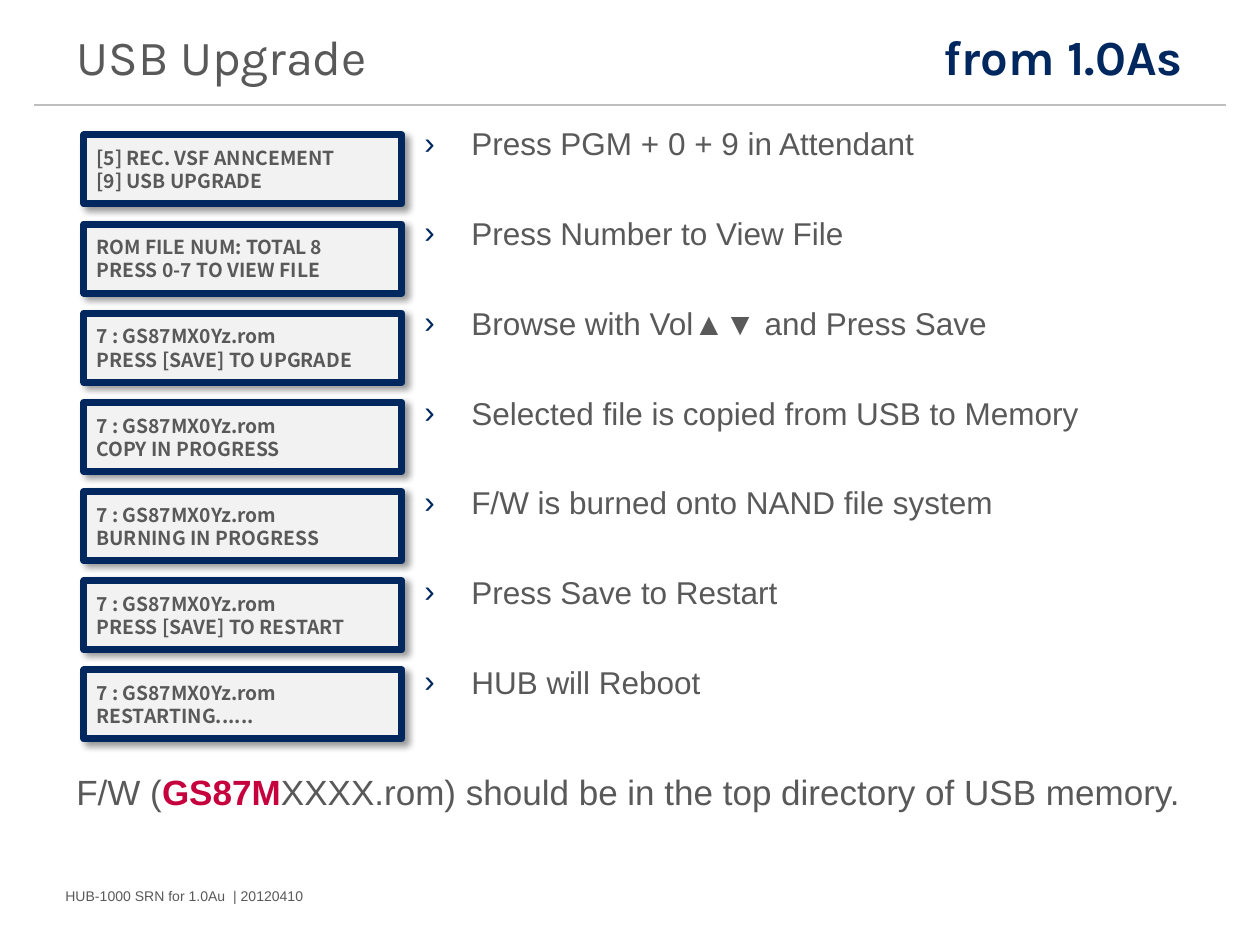
from lxml.etree import SubElement
from pptx import Presentation
from pptx.dml.color import RGBColor
from pptx.enum.shapes import MSO_CONNECTOR, MSO_SHAPE
from pptx.enum.text import MSO_ANCHOR, MSO_AUTO_SIZE, PP_ALIGN
from pptx.oxml.ns import qn
from pptx.util import Pt

TITLE = "USB Upgrade"
SINCE = "from 1.0As"
FOOT = "HUB-1000 SRN for 1.0Au  | 20120410"
NOTE = [("F/W (", "gray", False), ("GS87M", "red", True),
        ("XXXX.rom) should be in the top directory of USB memory.", "gray", False)]
ROM = "7 : GS87MX0Yz.rom"
CARDS = [
    ("[5] REC. VSF ANNCEMENT", "[9] USB UPGRADE"),
    ("ROM FILE NUM: TOTAL 8", "PRESS 0-7 TO VIEW FILE"),
    (ROM, "PRESS [SAVE] TO UPGRADE"),
    (ROM, "COPY IN PROGRESS"),
    (ROM, "BURNING IN PROGRESS"),
    (ROM, "PRESS [SAVE] TO RESTART"),
    (ROM, "RESTARTING......"),
]
STEPS = [
    "Press PGM + 0 + 9 in Attendant",
    "Press Number to View File",
    "Browse with Vol▲▼ and Press Save",
    "Selected file is copied from USB to Memory",
    "F/W is burned onto NAND file system",
    "Press Save to Restart",
    "HUB will Reboot",
]
HEX = {"gray": "595959", "navy": "00285E", "red": "C5003D",
       "pale": "F2F2F2", "rule": "BFBFBF", "black": "000000"}
PX = 914400 / 126
HEAD = (64, 20, 1131, 69)
FIRST, LAST = 135, 670


def emu(*vals):
    return [round(v * PX) for v in vals]


def rgb(name):
    return RGBColor.from_string(HEX[name])


def style(font, size, name="Arial", color="gray", bold=False):
    font.size = Pt(size)
    font.name = name
    font.bold = bold
    font.color.rgb = rgb(color)


def box(slide, area):
    frame = slide.shapes.add_textbox(*emu(*area)).text_frame
    frame.word_wrap = True
    return frame


def bullet(para):
    props = para._p.get_or_add_pPr()
    indent = emu(47)[0]
    props.set("marL", str(indent))
    props.set("indent", str(-indent))
    color = SubElement(props, qn("a:buClr"))
    SubElement(color, qn("a:srgbClr"), val=HEX["navy"])
    SubElement(props, qn("a:buFont"), typeface="Arial")
    SubElement(props, qn("a:buChar"), char="›")


def shade(shape):
    shape.shadow.inherit = False
    effects = shape._element.spPr.find(qn("a:effectLst"))
    drop = SubElement(effects, qn("a:outerShdw"), blurRad=str(Pt(4)), dist=str(Pt(3)),
                      dir="2700000", algn="tl", rotWithShape="0")
    color = SubElement(drop, qn("a:srgbClr"), val=HEX["black"])
    SubElement(color, qn("a:alpha"), val="40000")


def add_head(slide):
    title = slide.shapes.title
    title.left, title.top, title.width, title.height = emu(*HEAD)
    frame = title.text_frame
    frame.text = TITLE
    frame.auto_size = MSO_AUTO_SIZE.NONE
    frame.vertical_anchor = MSO_ANCHOR.TOP
    para = frame.paragraphs[0]
    para.alignment = PP_ALIGN.LEFT
    style(para.font, 28, "Karla")

    para = box(slide, HEAD).paragraphs[0]
    para.text = SINCE
    para.alignment = PP_ALIGN.RIGHT
    style(para.font, 28, "Karla", "navy", True)

    rule = slide.shapes.add_connector(MSO_CONNECTOR.STRAIGHT, *emu(34, 105, 1226, 105))
    rule.line.color.rgb = rgb("rule")
    rule.line.width = Pt(0.75)
    SubElement(rule._element.spPr, qn("a:effectLst"))


def add_cards(slide):
    pitch = (LAST - FIRST) / (len(CARDS) - 1)
    for row, lines in enumerate(CARDS):
        card = slide.shapes.add_shape(
            MSO_SHAPE.RECTANGLE, *emu(84, FIRST + row * pitch, 318, 69))
        card.fill.solid()
        card.fill.fore_color.rgb = rgb("pale")
        card.line.color.rgb = rgb("navy")
        card.line.width = Pt(4)
        shade(card)
        frame = card.text_frame
        frame.vertical_anchor = MSO_ANCHOR.MIDDLE
        frame.text = "\n".join(lines)
        for para in frame.paragraphs:
            para.alignment = PP_ALIGN.LEFT
            para.line_spacing = Pt(13.2)
            style(para.font, 11, "Noto Sans CJK KR", bold=True)


def add_steps(slide):
    frame = box(slide, (412, 118, 784, 764))
    frame.text = "\n".join(STEPS)
    for row, para in enumerate(frame.paragraphs):
        bullet(para)
        if row:
            para.space_before = Pt(29.7)
        style(para.font, 18)


def add_notes(slide):
    para = box(slide, (64, 764, 1131, 106)).paragraphs[0]
    for text, color, bold in NOTE:
        run = para.add_run()
        run.text = text
        style(run.font, 20, color=color, bold=bold)

    frame = box(slide, (53, 872, 486, 48))
    frame.vertical_anchor = MSO_ANCHOR.MIDDLE
    frame.text = FOOT
    style(frame.paragraphs[0].font, 8)


def main():
    deck = Presentation()
    deck.slide_width, deck.slide_height = emu(1260, 945)
    slide = deck.slides.add_slide(deck.slide_layouts[5])
    add_head(slide)
    add_cards(slide)
    add_steps(slide)
    add_notes(slide)
    deck.save("out.pptx")


if __name__ == "__main__":
    main()
